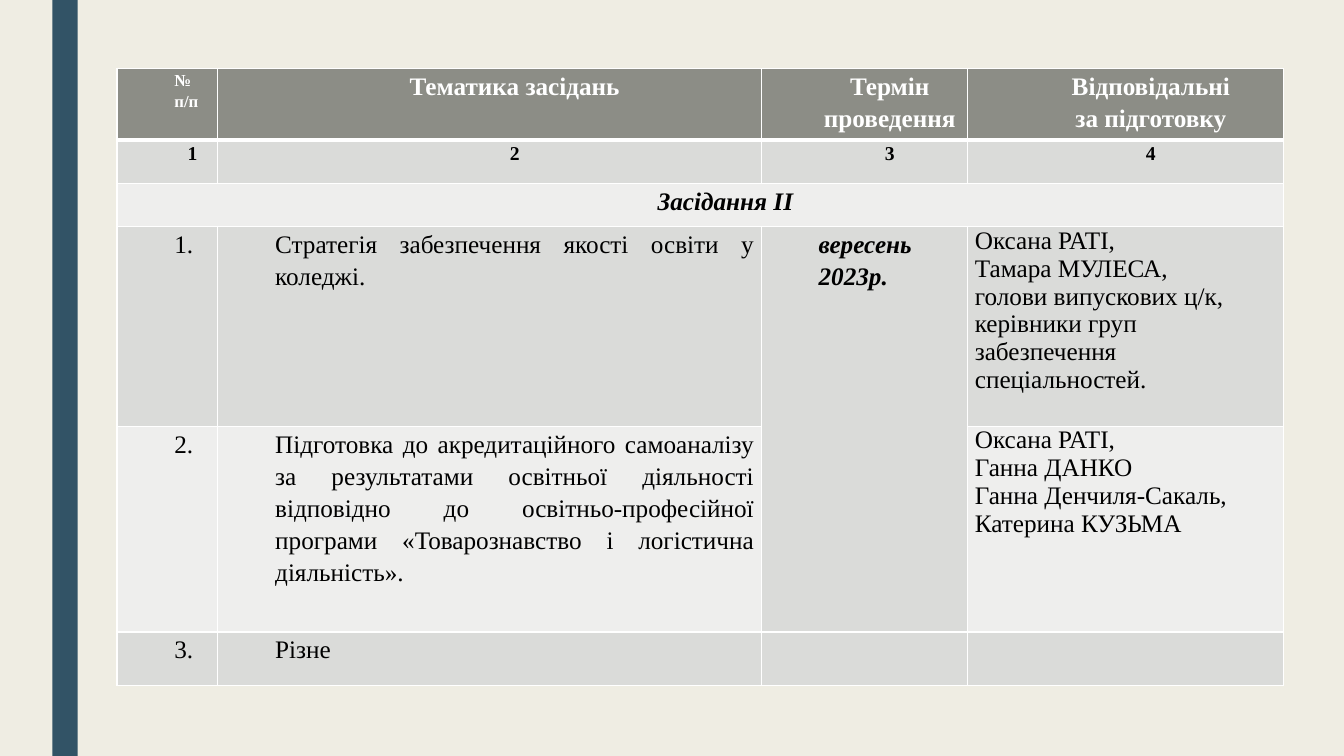
import pptx
import pptx.dml.color
import pptx.enum.shapes
import pptx.enum.text
import pptx.oxml
import pptx.oxml.ns
import pptx.util

Inches = pptx.util.Inches
Align = pptx.enum.text.PP_ALIGN

COLORS = {
    "background": "EFEDE3",
    "bar": "325366",
    "header": "8C8D86",
    "dark_band": "DADBD9",
    "light_band": "EEEEED",
    "white": "FFFFFF",
    "black": "000000",
}

COLUMN_WIDTHS = [1, 5.39, 2.05, 3.13]
ROW_HEIGHTS = [0.71, 0.43, 0.43, 1.98, 2.04, 0.53]

ROWS = [
    ["№\nп/п", "Тематика засідань", "Термін проведення", "Відповідальні\nза підготовку"],
    ["1", "2", "3", "4"],
    ["Засідання ІІ", "", "", ""],
    [
        "1.",
        "Стратегія забезпечення якості освіти у коледжі.",
        "вересень 2023р.",
        "Оксана РАТІ,\nТамара МУЛЕСА,\nголови випускових ц/к,\n"
        "керівники груп забезпечення спеціальностей.",
    ],
    [
        "2.",
        "Підготовка до акредитаційного самоаналізу за результатами освітньої діяльності "
        "відповідно до освітньо-професійної програми «Товарознавство і логістична діяльність».",
        "",
        "Оксана РАТІ,\nГанна ДАНКО\nГанна Денчиля-Сакаль,\nКатерина КУЗЬМА",
    ],
    ["3.", "Різне", "", ""],
]


class SlideBuilder:
    font = "Times New Roman"

    def __init__(self, slide):
        self.slide = slide

    def color(self, name):
        return pptx.dml.color.RGBColor.from_string(COLORS[name])

    def paint(self, fill, name):
        fill.solid()
        fill.fore_color.rgb = self.color(name)

    def background(self, name):
        self.paint(self.slide.background.fill, name)

    def bar(self, left, top, width, height, name):
        shape = self.slide.shapes.add_shape(
            pptx.enum.shapes.MSO_SHAPE.RECTANGLE,
            Inches(left), Inches(top), Inches(width), Inches(height),
        )
        shape.shadow.inherit = False
        self.paint(shape.fill, name)
        shape.line.fill.background()

    def table(self, left, top, widths, heights):
        frame = self.slide.shapes.add_table(
            len(heights), len(widths),
            Inches(left), Inches(top), Inches(sum(widths)), Inches(sum(heights)),
        )
        table = frame.table
        table.first_row = False
        table.horz_banding = False
        for column, width in zip(table.columns, widths):
            column.width = Inches(width)
        for row, height in zip(table.rows, heights):
            row.height = Inches(height)
        return table

    def borders(self, cell, top, bottom):
        properties = cell._tc.get_or_add_tcPr()
        for side, points in (("L", 1), ("R", 1), ("T", top), ("B", bottom)):
            properties.append(pptx.oxml.parse_xml(
                f'<a:ln{side} {pptx.oxml.ns.nsdecls("a")} w="{pptx.util.Pt(points)}">'
                f'<a:solidFill><a:srgbClr val="{COLORS["white"]}"/></a:solidFill>'
                f'</a:ln{side}>'
            ))

    def cell(self, cell, text, fill, top=1, bottom=1, size=18, color="black",
             bold=False, italic=False, align=Align.JUSTIFY, indented=True):
        self.borders(cell, top, bottom)
        self.paint(cell.fill, fill)
        cell.margin_left = cell.margin_right = Inches(0.07)
        cell.margin_top = cell.margin_bottom = 0
        cell.text_frame.text = text
        for para in cell.text_frame.paragraphs:
            para.alignment = align
            if indented:
                para.line_spacing = 1.15
                properties = para._p.get_or_add_pPr()
                properties.set("marL", str(Inches(0.5)))
                properties.set("indent", "0")
            for span in para.runs:
                span.font.name = self.font
                span.font.size = pptx.util.Pt(size)
                span.font.bold = bold
                span.font.italic = italic
                span.font.color.rgb = self.color(color)


def cell_style(row, column):
    if row == 0:
        style = {"fill": "header", "color": "white", "bold": True, "bottom": 3}
        if column == 0:
            return {**style, "size": 12}
        return {**style, "align": Align.CENTER}
    if row == 1:
        return {"fill": "dark_band", "size": 14, "bold": True, "top": 3,
                "align": Align.CENTER}
    if row == 2:
        return {"fill": "light_band", "bold": True, "italic": True,
                "align": Align.CENTER}
    style = {"fill": "dark_band" if row % 2 else "light_band"}
    if column == 2:
        return {**style, "bold": True, "italic": True}
    if column == 3:
        return {**style, "align": Align.LEFT, "indented": False}
    return style


def main():
    deck = pptx.Presentation()
    deck.slide_width = Inches(13.33)
    deck.slide_height = Inches(7.5)
    page = SlideBuilder(deck.slides.add_slide(deck.slide_layouts[6]))
    page.background("background")
    page.bar(0.52, 0, 0.25, 7.5, "bar")

    schedule = page.table(1.16, 0.68, COLUMN_WIDTHS, ROW_HEIGHTS)
    for row, texts in enumerate(ROWS):
        for column, text in enumerate(texts):
            page.cell(schedule.cell(row, column), text, **cell_style(row, column))
    schedule.cell(2, 0).merge(schedule.cell(2, 3))
    schedule.cell(3, 2).merge(schedule.cell(4, 2))

    deck.save("out.pptx")


if __name__ == "__main__":
    main()
